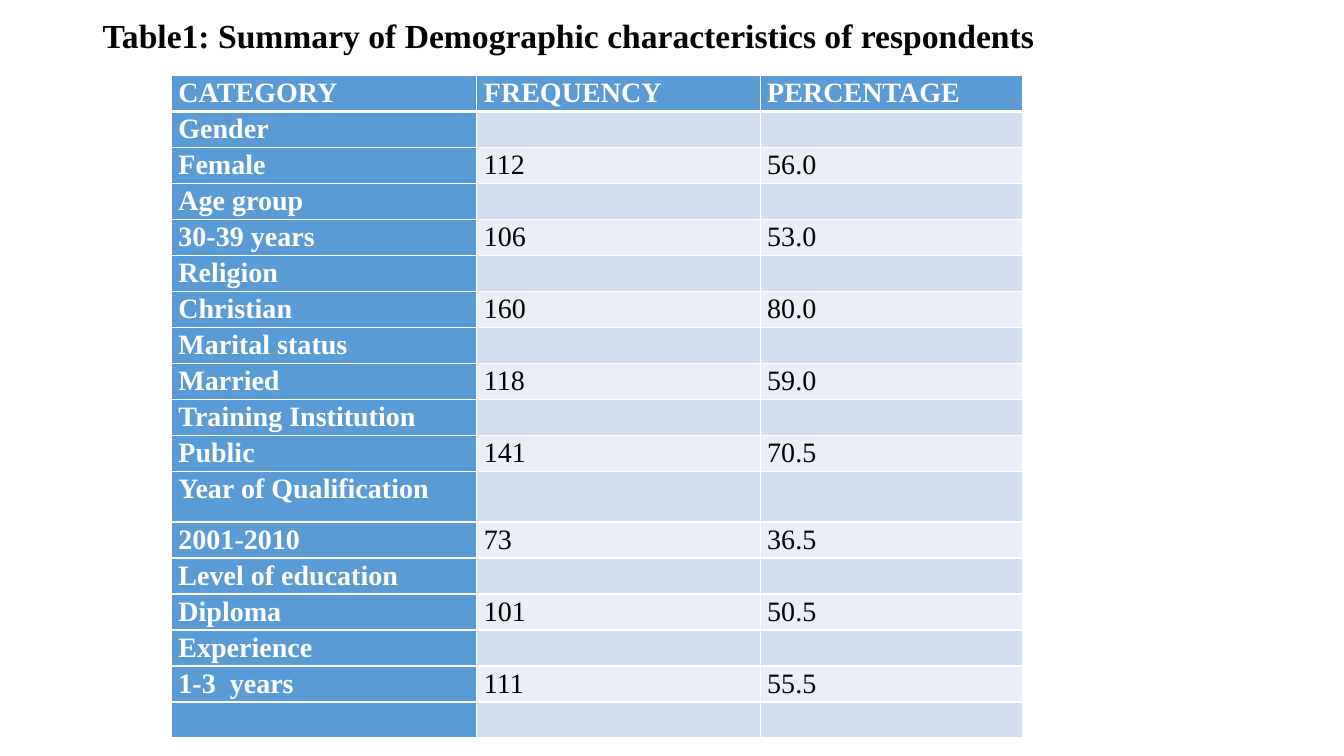
import lxml.etree
import pptx
import pptx.dml.color
import pptx.enum.text
import pptx.oxml.ns
import pptx.util

Inches = pptx.util.Inches
Pt = pptx.util.Pt

COLORS = {
    "text": "000000",
    "reverse": "FFFFFF",
    "border": "FFFFFF",
    "header": "5B9BD5",
    "group_row": "D2DEEF",
    "value_row": "EAEFF7",
}

HEADINGS = ("CATEGORY", "FREQUENCY", "PERCENTAGE")
RESPONDENTS = [
    ("Gender", "Female", "112", "56.0"),
    ("Age group", "30-39 years", "106", "53.0"),
    ("Religion", "Christian", "160", "80.0"),
    ("Marital status", "Married", "118", "59.0"),
    ("Training Institution", "Public", "141", "70.5"),
    ("Year of Qualification", "2001-2010", "73", "36.5"),
    ("Level of education", "Diploma", "101", "50.5"),
    ("Experience", "1-3  years", "111", "55.5"),
]
COLUMN_WIDTHS = (3.03, 2.81, 2.6)
ROW_HEIGHT = 0.35
TALL_ROW_HEIGHT = 0.5
TALL_ROW_LABEL = "Year of Qualification"


def rgb(color):
    return pptx.dml.color.RGBColor.from_string(COLORS[color])


def write_text(frame, text, *, font, size, color="text", bold=False, spacing=1.0):
    paragraph = frame.paragraphs[0]
    paragraph.line_spacing = spacing
    run = paragraph.add_run()
    run.text = text
    run.font.name = font
    run.font.size = Pt(size)
    run.font.bold = bold
    run.font.color.rgb = rgb(color)


def set_borders(cell, **widths):
    """Draw solid cell borders; call before filling, as lines precede the fill."""
    properties = cell._tc.get_or_add_tcPr()
    qn = pptx.oxml.ns.qn
    for side in "LRTB":
        line = lxml.etree.SubElement(
            properties, qn(f"a:ln{side}"), w=str(Pt(widths.get(side, 1)))
        )
        fill = lxml.etree.SubElement(line, qn("a:solidFill"))
        lxml.etree.SubElement(fill, qn("a:srgbClr"), val=COLORS["border"])


class SlideBuilder:
    def __init__(self, slide, font):
        self.slide = slide
        self.font = font

    def title(self, text, left, top, width, height):
        box = self.slide.shapes.add_textbox(
            Inches(left), Inches(top), Inches(width), Inches(height)
        )
        frame = box.text_frame
        frame.word_wrap = True
        frame.vertical_anchor = pptx.enum.text.MSO_ANCHOR.MIDDLE
        write_text(frame, text, font=self.font, size=24, bold=True, spacing=0.9)

    def table(self, rows, left, top, widths, heights):
        table = self.slide.shapes.add_table(
            len(rows), len(widths), Inches(left), Inches(top),
            Inches(sum(widths)), Inches(sum(heights)),
        ).table
        table.first_col = True
        for column, width in zip(table.columns, widths):
            column.width = Inches(width)
        for row, height in zip(table.rows, heights):
            row.height = Inches(height)
        for row_index, row in enumerate(rows):
            for column_index, text in enumerate(row):
                self.cell(table.cell(row_index, column_index), text,
                          row_index, column_index)

    def cell(self, cell, text, row, column):
        heading = row == 0 or column == 0
        cell.margin_left = cell.margin_right = Inches(0.07)
        cell.margin_top = cell.margin_bottom = 0
        set_borders(cell, T=3 if row == 1 else 1, B=3 if row == 0 else 1)
        band = "group_row" if row % 2 else "value_row"
        cell.fill.solid()
        cell.fill.fore_color.rgb = rgb("header" if heading else band)
        if text:
            write_text(cell.text_frame, text, font=self.font, size=20,
                       color="reverse" if heading else "text",
                       bold=heading, spacing=1.07)


def main():
    presentation = pptx.Presentation()
    presentation.slide_width = Inches(13.33)
    presentation.slide_height = Inches(7.5)
    slide = presentation.slides.add_slide(presentation.slide_layouts[6])
    builder = SlideBuilder(slide, "Times New Roman")

    builder.title("Table1: Summary of Demographic characteristics of respondents",
                  0.92, 0, 11.5, 0.75)

    rows = [HEADINGS]
    for group, category, frequency, percentage in RESPONDENTS:
        rows += [(group, "", ""), (category, frequency, percentage)]
    rows.append(("", "", ""))
    heights = [TALL_ROW_HEIGHT if row[0] == TALL_ROW_LABEL else ROW_HEIGHT
               for row in rows]
    builder.table(rows, 1.7, 0.75, COLUMN_WIDTHS, heights)

    presentation.save("out.pptx")


if __name__ == "__main__":
    main()
